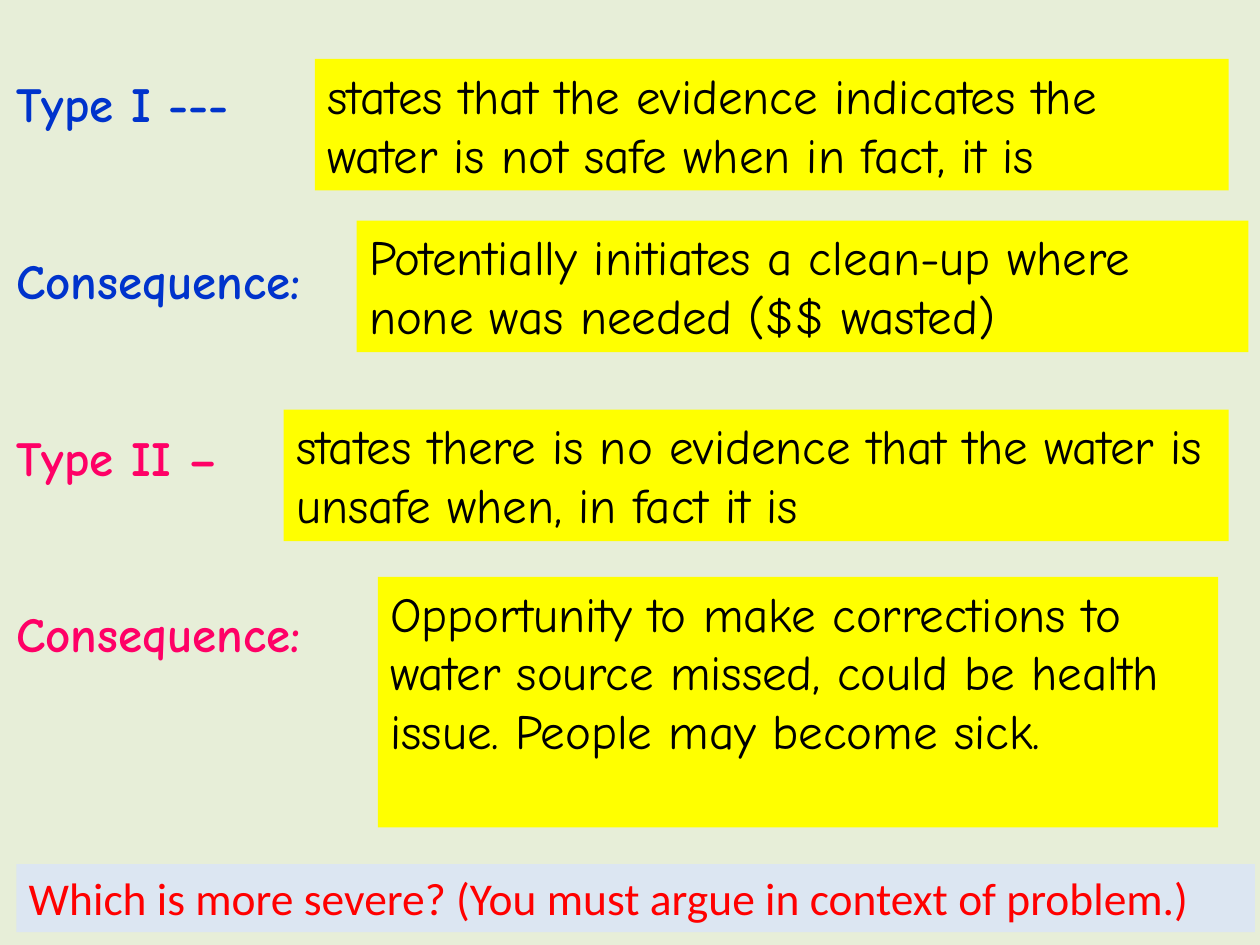
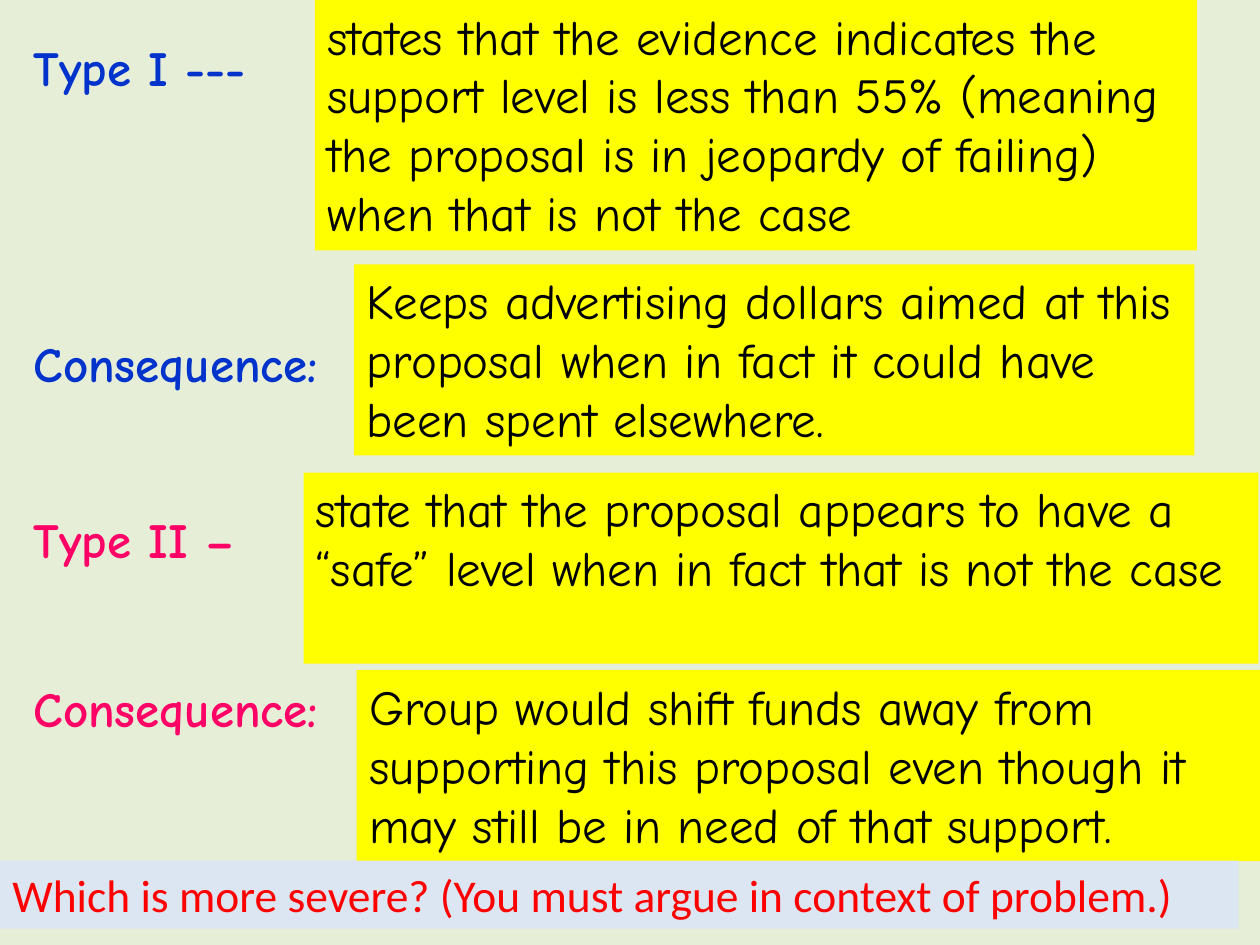
"""Build two slides that set out Type I and Type II errors with their consequences."""
from pptx import Presentation
from pptx.dml.color import RGBColor as Rgb
from pptx.enum.shapes import MSO_SHAPE as Shape
from pptx.enum.text import MSO_ANCHOR as Anchor, PP_ALIGN as Align
from pptx.util import Cm, Pt

COLORS = {
    "background": "E7EED8",
    "answer": "FFFF00",
    "question": "DCE6F2",
    "type_one": "0033CC",
    "type_two": "FF0066",
    "ink": "000000",
    "alert": "FF0000",
}
HAND_FONT, PLAIN_FONT = "Comic Neue", "Calibri"
LABELS = [
    ("Type I ---", "type_one"),
    ("Consequence:", "type_one"),
    ("Type II –", "type_two"),
    ("Consequence:", "type_two"),
]
QUESTION = "Which is more severe? (You must argue in context of problem.)"
LINE_HEIGHT, PADDING = 1.2, 0.25

SLIDES = [
    {
        "labels_at": (0.08, 1.35, 12.7, 12.22),
        "label_gaps": (0, 67.5, 67.5, 67.5),
        "question_at": (0.33, 17.42),
        "answers": [
            (6.35, 1.19, 18.42, 2, "states that the evidence indicates the water is not safe "
             "when in fact, it is"),
            (7.19, 4.45, 17.98, 2, "Potentially initiates a clean-up where none was needed "
             "($$ wasted)"),
            (5.72, 8.26, 19.05, 2, "states there is no evidence that the water is unsafe when, "
             "in fact it is"),
            (7.62, 11.63, 16.94, 4, "Opportunity to make corrections to water source missed, "
             "could be health issue. People may become sick."),
        ],
    },
    {
        "labels_at": (0.43, 0.64, 12.7, 14.45),
        "label_gaps": (0, 135, 67.5, 62.5),
        "question_at": (0, 17.35),
        "answers": [
            (6.35, 0, 17.78, 4, "states that the evidence indicates the support level is less "
             "than 55% (meaning the proposal is in jeopardy of failing) when that is not the case"),
            (7.14, 5.33, 16.94, 3, "Keeps advertising dollars aimed at this proposal when in "
             "fact it could have been spent elsewhere."),
            (6.12, 9.53, 19.25, 3, "state that the proposal appears to have a “safe” level when "
             "in fact that is not the case"),
            (7.19, 13.51, 18.42, 3, "Group would shift funds away from supporting this proposal "
             "even though it may still be in need of that support."),
        ],
    },
]


def write(para, text, *, color="ink", font=HAND_FONT, size=28, bold=False, gap=0):
    para.alignment = Align.LEFT
    para.space_before = Pt(gap)
    span = para.add_run()
    span.text = text
    span.font.name = font
    span.font.size = Pt(size)
    span.font.bold = bold
    span.font.color.rgb = Rgb.from_string(COLORS[color])


def add_panel(page, left, top, width, height, fill):
    panel = page.shapes.add_shape(Shape.RECTANGLE, Cm(left), Cm(top), Cm(width), Cm(height))
    panel.shadow.inherit = False
    panel.fill.solid()
    panel.fill.fore_color.rgb = Rgb.from_string(COLORS[fill])
    panel.line.fill.background()
    panel.text_frame.word_wrap = True
    panel.text_frame.vertical_anchor = Anchor.TOP
    return panel.text_frame.paragraphs[0]


deck = Presentation()
deck.slide_width, deck.slide_height = Cm(25.4), Cm(19.05)

for content in SLIDES:
    page = deck.slides.add_slide(deck.slide_layouts[6])
    page.background.fill.solid()
    page.background.fill.fore_color.rgb = Rgb.from_string(COLORS["background"])

    box = page.shapes.add_textbox(*map(Cm, content["labels_at"]))
    frame = box.text_frame
    frame.word_wrap = True
    for index, ((label, color), gap) in enumerate(zip(LABELS, content["label_gaps"])):
        para = frame.add_paragraph() if index else frame.paragraphs[0]
        write(para, label, color=color, bold=True, gap=gap)

    for left, top, width, lines, answer in content["answers"]:
        height = lines * LINE_HEIGHT + PADDING
        write(add_panel(page, left, top, width, height, "answer"), answer)

    para = add_panel(page, *content["question_at"], 24.97, 1.37, "question")
    write(para, QUESTION, color="alert", font=PLAIN_FONT, size=26)

deck.save("out.pptx")
